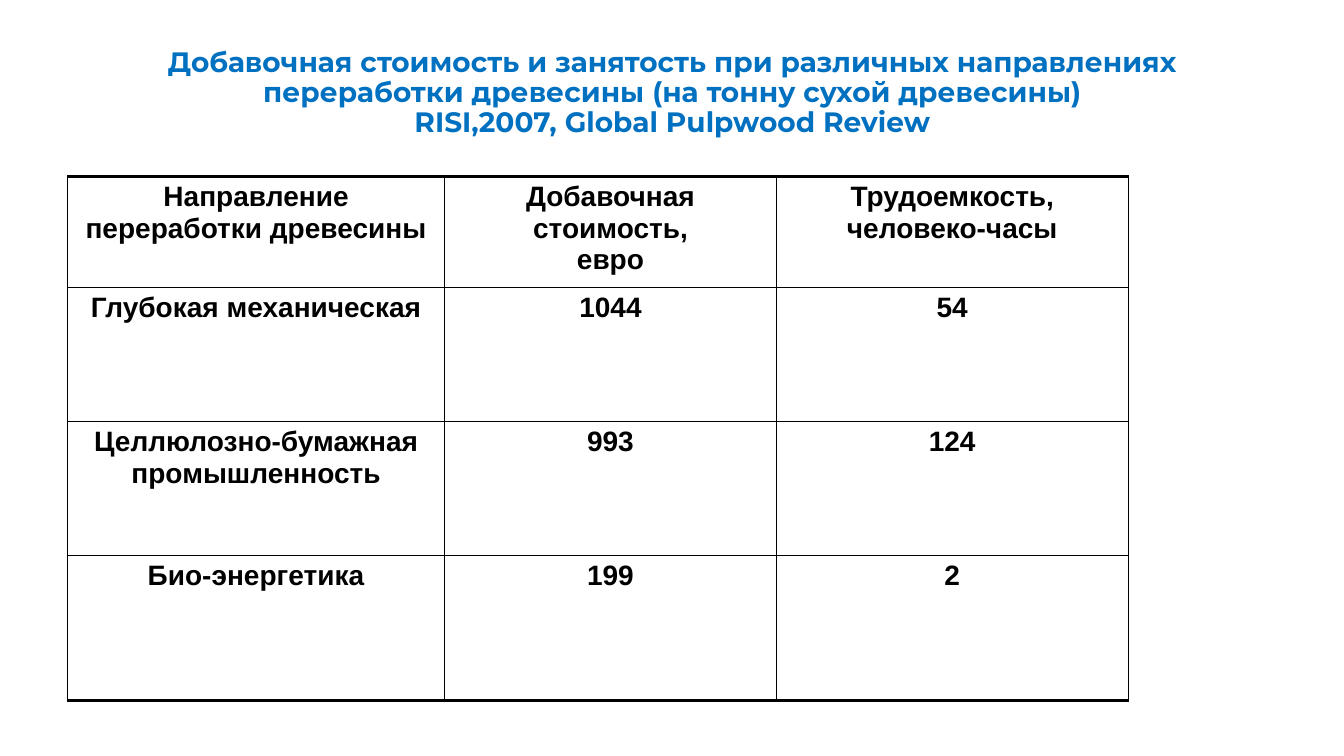
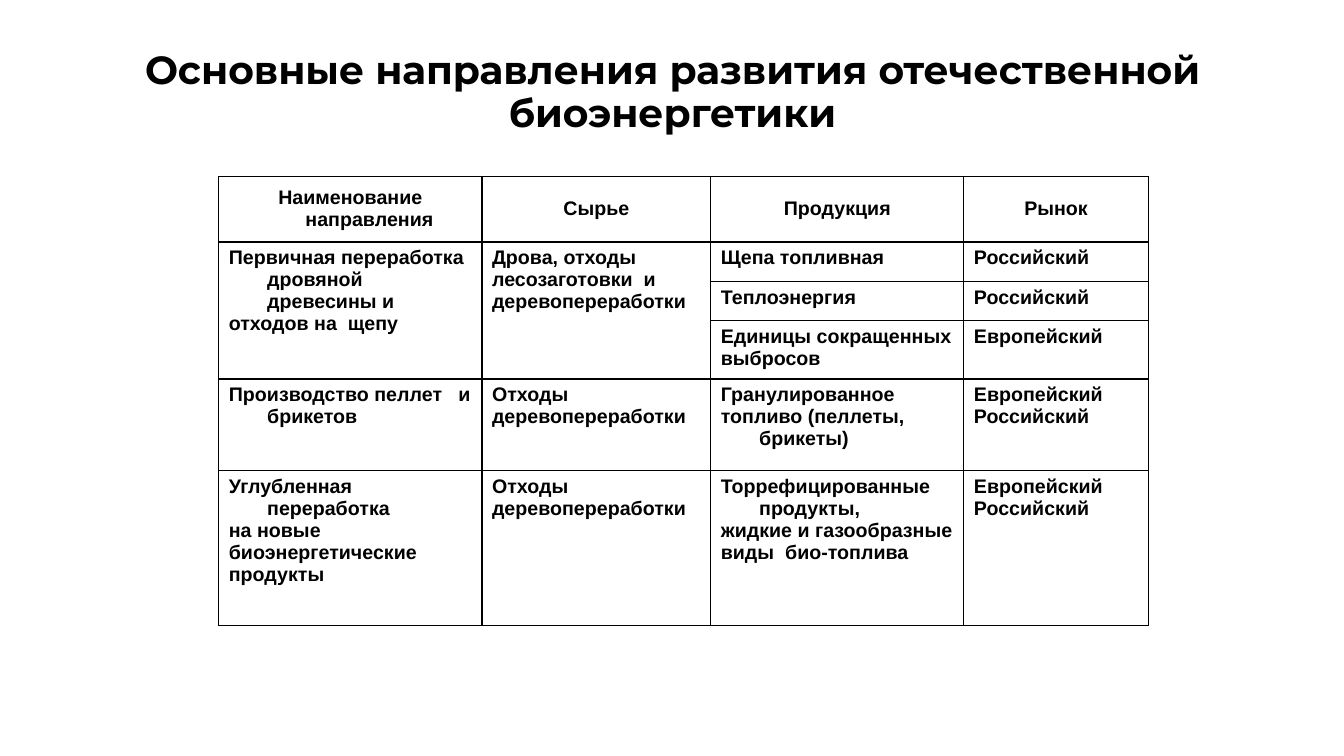
"""Builds two slides with tables on wood processing and bioenergy."""
from lxml import etree
from pptx import Presentation
from pptx.dml.color import RGBColor
from pptx.enum.text import MSO_ANCHOR, PP_ALIGN
from pptx.oxml.ns import qn
from pptx.util import Inches, Pt

CENTER, LEFT = PP_ALIGN.CENTER, PP_ALIGN.LEFT
TOP, MIDDLE = MSO_ANCHOR.TOP, MSO_ANCHOR.MIDDLE
BLACK, BLUE = "000000", "0070C0"
TITLE_FONT, TABLE_FONT = "Montserrat", "Arial"
TABLE_TOP = 1.75
HANGING = Inches(0.38)


def style(para, font_name, size, color, align):
    """Sets the bold text style of a paragraph."""
    para.alignment = align
    para.font.name = font_name
    para.font.size = Pt(size)
    para.font.bold = True
    para.font.color.rgb = RGBColor.from_string(color)


def add_border(cell, side, width):
    """Adds a solid black line to one side of a cell."""
    line = etree.SubElement(cell._tc.get_or_add_tcPr(), qn(f"a:ln{side}"), w=str(Pt(width)))
    fill = etree.SubElement(line, qn("a:solidFill"))
    etree.SubElement(fill, qn("a:srgbClr"), val=BLACK)


slides = [
    {
        "title": "Добавочная стоимость и занятость при различных направлениях "
                 "переработки древесины (на тонну сухой древесины)\n"
                 "RISI,2007, Global Pulpwood Review",
        "title_size": 20,
        "title_color": BLUE,
        "left": 0.67,
        "columns": [3.74, 3.29, 3.49],
        "rows": [1.1, 1.33, 1.33, 1.44],
        "column_lines": [0.75, 1, 0.75, 0.75],
        "row_lines": [2, 1, 0.75, 1, 2],
        "size": 20,
        "body_align": CENTER,
        "header_anchor": TOP,
        "hanging": False,
        "merges": [],
        "cells": [
            ["Направление переработки древесины", "Добавочная стоимость,\nевро",
             "Трудоемкость, человеко-часы"],
            ["Глубокая механическая", "1044", "54"],
            ["Целлюлозно-бумажная промышленность", "993", "124"],
            ["Био-энергетика", "199", "2"],
        ],
    },
    {
        "title": "Основные направления развития отечественной биоэнергетики",
        "title_size": 28,
        "title_color": BLACK,
        "left": 2.17,
        "columns": [2.61, 2.27, 2.51, 1.83],
        "rows": [0.65, 0.39, 0.39, 0.58, 0.91, 1.54],
        "column_lines": [1] * 5,
        "row_lines": [1] * 7,
        "size": 14,
        "body_align": LEFT,
        "header_anchor": MIDDLE,
        "hanging": True,
        "merges": [((1, 0), (3, 0)), ((1, 1), (3, 1))],
        "cells": [
            ["Наименование направления", "Сырье", "Продукция", "Рынок"],
            ["Первичная переработка дровяной древесины и\nотходов на  щепу",
             "Дрова, отходы\nлесозаготовки  и\nдеревопереработки",
             "Щепа топливная", "Российский"],
            ["", "", "Теплоэнергия", "Российский"],
            ["", "", "Единицы сокращенных\nвыбросов", "Европейский"],
            ["Производство пеллет   и брикетов", "Отходы\nдеревопереработки",
             "Гранулированное\nтопливо (пеллеты, брикеты)", "Европейский\nРоссийский"],
            ["Углубленная переработка\nна новые\nбиоэнергетические\nпродукты",
             "Отходы\nдеревопереработки",
             "Торрефицированные продукты,\nжидкие и газообразные\nвиды  био-топлива",
             "Европейский\nРоссийский"],
        ],
    },
]

deck = Presentation()
deck.slide_width, deck.slide_height = Inches(13.33), Inches(7.5)
blank = deck.slide_layouts[6]

for content in slides:
    page = deck.slides.add_slide(blank)

    box = page.shapes.add_textbox(Inches(0.67), Inches(0.3), Inches(12), Inches(1.25))
    box.text_frame.word_wrap = True
    box.text_frame.vertical_anchor = MIDDLE
    title = box.text_frame.paragraphs[0]
    title.text = content["title"]
    title.line_spacing = 0.9
    style(title, TITLE_FONT, content["title_size"], content["title_color"], CENTER)

    columns, rows = content["columns"], content["rows"]
    table = page.shapes.add_table(
        len(rows), len(columns), Inches(content["left"]), Inches(TABLE_TOP),
        Inches(sum(columns)), Inches(sum(rows))).table
    table.first_row = table.horz_banding = False
    for column, width in zip(table.columns, columns):
        column.width = Inches(width)
    for row, height in zip(table.rows, rows):
        row.height = Inches(height)
    for first, last in content["merges"]:
        table.cell(*first).merge(table.cell(*last))

    for r, texts in enumerate(content["cells"]):
        for c, text in enumerate(texts):
            cell = table.cell(r, c)
            cell.text = text
            cell.vertical_anchor = TOP if r else content["header_anchor"]
            add_border(cell, "L", content["column_lines"][c])
            add_border(cell, "R", content["column_lines"][c + 1])
            add_border(cell, "T", content["row_lines"][r])
            add_border(cell, "B", content["row_lines"][r + 1])
            cell.fill.background()
            for para in cell.text_frame.paragraphs:
                if content["hanging"]:
                    properties = para._p.get_or_add_pPr()
                    properties.set("marL", str(HANGING))
                    properties.set("indent", str(-HANGING))
                style(para, TABLE_FONT, content["size"], BLACK,
                      content["body_align"] if r else CENTER)

deck.save("out.pptx")
